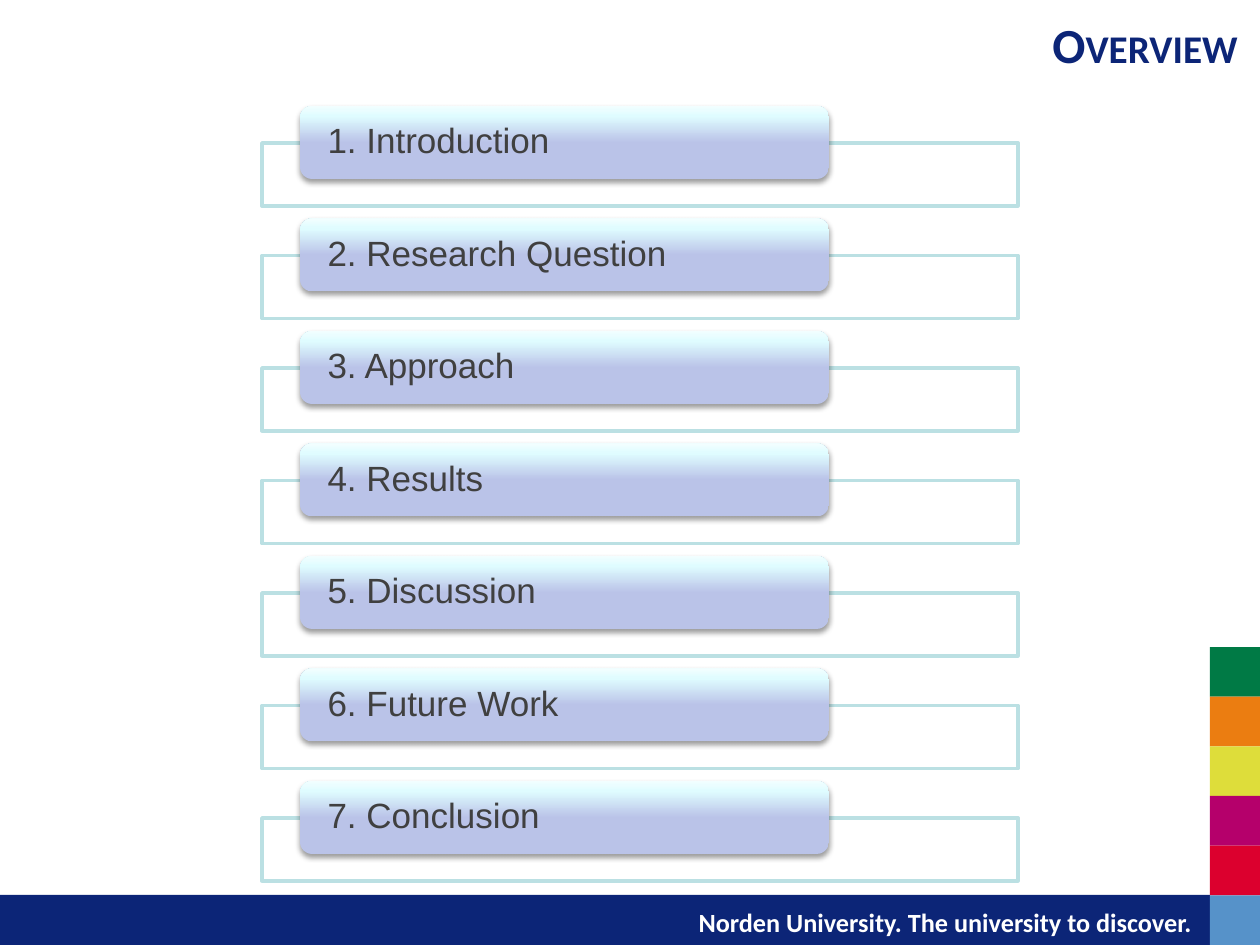
import lxml.etree
import pptx
import pptx.dml.color
import pptx.enum.shapes
import pptx.enum.text
import pptx.oxml
import pptx.oxml.ns
import pptx.util

RGB = pptx.dml.color.RGBColor
KIND = pptx.enum.shapes.MSO_SHAPE
ALIGN = pptx.enum.text.PP_ALIGN
SCALE = 914400 / 126

NAVY = RGB(0x0C, 0x25, 0x77)
WHITE = RGB(0xFF, 0xFF, 0xFF)
GREY = RGB(0x40, 0x40, 0x40)
TEAL = RGB(0xBB, 0xE0, 0xE3)
LILAC = RGB(0xBA, 0xC3, 0xE8)
AQUA = RGB(0xDF, 0xFC, 0xFF)
FROST = RGB(0xF2, 0xFE, 0xFF)
BLACK = RGB(0x00, 0x00, 0x00)
SWATCH = [
    RGB(0x00, 0x7A, 0x45),
    RGB(0xEB, 0x7D, 0x11),
    RGB(0xDE, 0xDD, 0x3A),
    RGB(0xB5, 0x00, 0x6B),
    RGB(0xDC, 0x00, 0x2E),
    RGB(0x56, 0x92, 0xC9),
]
TOPICS = [
    "Introduction",
    "Research Question",
    "Approach",
    "Results",
    "Discussion",
    "Future Work",
    "Conclusion",
]


def px(count):
    return pptx.util.Emu(round(count * SCALE))


def block(slide, kind, x, y, w, h, fill=None, line=None):
    shape = slide.shapes.add_shape(kind, px(x), px(y), px(w), px(h))
    shape.shadow.inherit = False
    if fill is not None:
        shape.fill.solid()
        shape.fill.fore_color.rgb = fill
    if line is None:
        shape.line.fill.background()
    else:
        shape.line.color.rgb = line
        shape.line.width = pptx.util.Pt(2)
    return shape


def write(shape, text, size, color, font="Calibri", bold=False, small=False,
          align=ALIGN.LEFT, left=0, right=0, space=1.0):
    frame = shape.text_frame
    frame.word_wrap = True
    frame.vertical_anchor = pptx.enum.text.MSO_ANCHOR.MIDDLE
    frame.margin_left, frame.margin_right = px(left), px(right)
    frame.margin_top = frame.margin_bottom = 0
    para = frame.paragraphs[0]
    para.alignment = align
    para.line_spacing = space
    run = para.add_run()
    run.text = text
    run.font.name = font
    run.font.size = pptx.util.Pt(size)
    run.font.bold = bold
    run.font.color.rgb = color
    if small:
        run.font._element.set("cap", "small")


def label(slide, x, y, w, h, text, **form):
    box = slide.shapes.add_textbox(px(x), px(y), px(w), px(h))
    write(box, text, **form)


def gloss(shape):
    space = pptx.oxml.ns.nsdecls("a")
    stops = "".join(
        f'<a:gs pos="{spot}000"><a:srgbClr val="{tint}"/></a:gs>'
        for spot, tint in [(50, LILAC), (86, AQUA), (100, FROST)]
    )
    fill = pptx.oxml.parse_xml(
        f'<a:gradFill {space} rotWithShape="1"><a:gsLst>{stops}</a:gsLst>'
        '<a:lin ang="16200000" scaled="0"/></a:gradFill>'
    )
    props = shape._element.spPr
    props.find(pptx.oxml.ns.qn("a:prstGeom")).addnext(fill)
    glow = props.find(pptx.oxml.ns.qn("a:effectLst"))
    shade = lxml.etree.SubElement(
        glow, pptx.oxml.ns.qn("a:outerShdw"),
        blurRad=str(pptx.util.Pt(3.1)), dist=str(pptx.util.Pt(1.6)),
        dir="5400000", rotWithShape="0",
    )
    tone = lxml.etree.SubElement(
        shade, pptx.oxml.ns.qn("a:srgbClr"), val=str(BLACK))
    lxml.etree.SubElement(tone, pptx.oxml.ns.qn("a:alpha"), val="38000")


def title(slide, x, y, w, h):
    label(slide, x, y, w, h, "Overview", size=28, color=NAVY, bold=True,
          small=True, align=ALIGN.RIGHT, right=22)


def footer(slide, x, y, w, h):
    block(slide, KIND.RECTANGLE, x, y, w, h, fill=NAVY)
    label(slide, x + w // 2, y + 4, w - w // 2, h - 5,
          "Norden University. The university to discover.", size=15,
          color=WHITE, bold=True, align=ALIGN.RIGHT, right=18)


def stripe(slide, x, y, w, h):
    for i, tint in enumerate(SWATCH):
        top = y + h * i / len(SWATCH)
        block(slide, KIND.RECTANGLE, x, top, w, h / len(SWATCH), fill=tint)


def agenda(slide, x, y, w, h):
    pill, drop, frame = 73, 37, 63
    step = (h - drop - frame) / (len(TOPICS) - 1)
    for i, topic in enumerate(TOPICS):
        top = y + step * i
        block(slide, KIND.RECTANGLE, x, top + drop, w, frame,
              fill=WHITE, line=TEAL)
        tab = block(slide, KIND.ROUNDED_RECTANGLE, x + 38, top, 529, pill)
        gloss(tab)
        write(tab, f"{i + 1}. {topic}", size=20, color=GREY, font="Arial",
              left=24, right=24, space=0.9)


def main():
    deck = pptx.Presentation()
    deck.slide_width, deck.slide_height = px(1260), px(945)
    slide = deck.slides.add_slide(deck.slide_layouts[6])
    footer(slide, 0, 895, 1210, 50)
    stripe(slide, 1210, 647, 50, 298)
    title(slide, 0, 0, 1260, 87)
    agenda(slide, 262, 106, 756, 775)
    deck.save("out.pptx")


if __name__ == "__main__":
    main()
